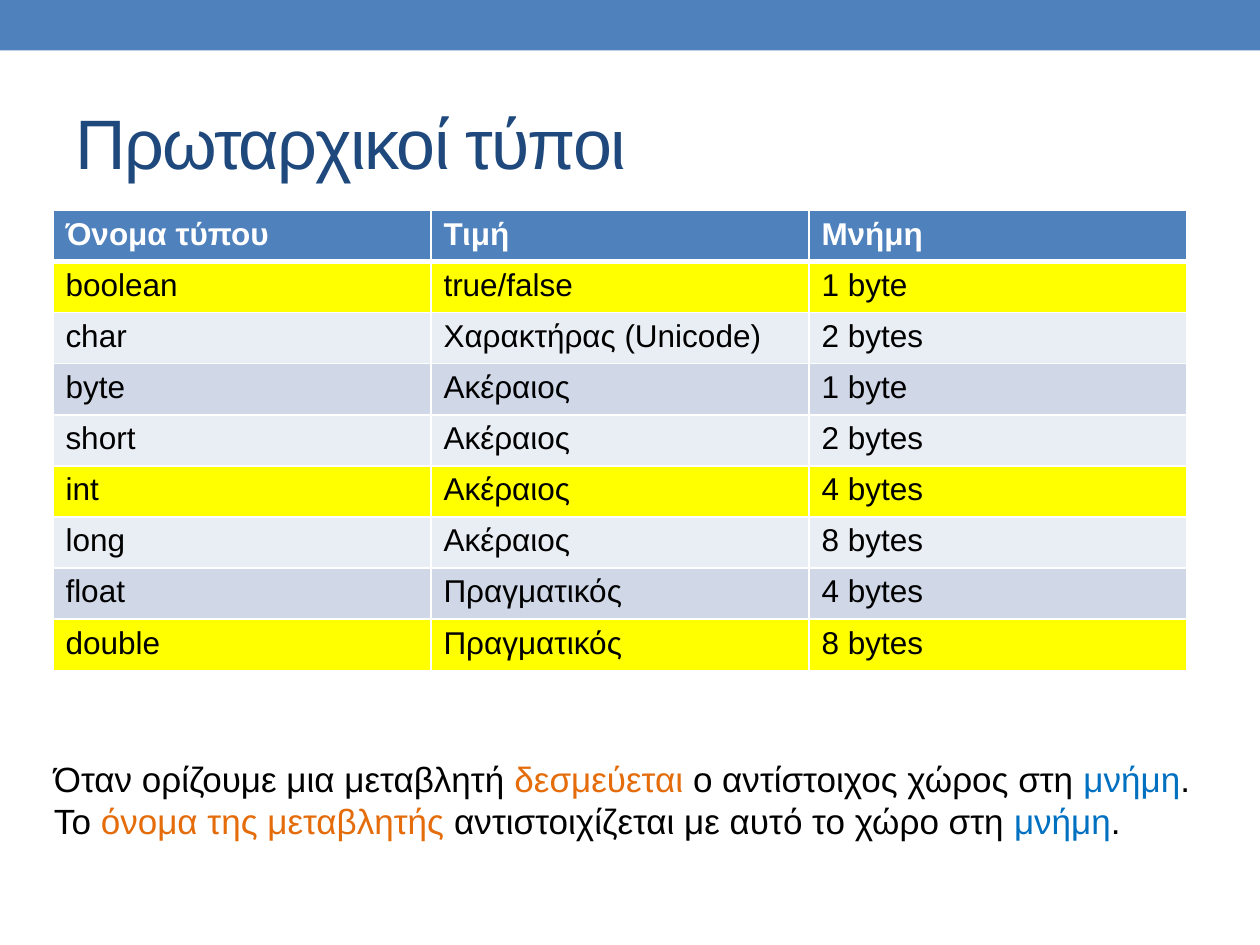
"""Build a slide on the primitive types and the memory they take."""
from dataclasses import dataclass

from lxml import etree
from pptx import Presentation
from pptx.dml.color import RGBColor
from pptx.enum.shapes import MSO_SHAPE
from pptx.enum.text import MSO_ANCHOR, MSO_AUTO_SIZE
from pptx.oxml.ns import qn
from pptx.util import Inches, Pt

RECT = MSO_SHAPE.RECTANGLE
MIDDLE = MSO_ANCHOR.MIDDLE
GROW = MSO_AUTO_SIZE.SHAPE_TO_FIT_TEXT


@dataclass(frozen=True)
class Theme:
    font: str = "Arial"
    blue: str = "4F81BD"
    navy: str = "1F497D"
    white: str = "FFFFFF"
    black: str = "000000"
    mark: str = "FFFF00"
    pale: str = "E9EDF4"
    band: str = "D0D8E8"
    warm: str = "E46C0A"
    cool: str = "0070C0"
    title: int = 40
    cell: int = 18
    note: int = 20


theme = Theme()


def add_run(para, text, size, color, bold=False):
    run = para.add_run()
    run.text = text
    run.font.name = theme.font
    run.font.size = Pt(size)
    run.font.bold = bold
    run.font.color.rgb = RGBColor.from_string(color)
    return run


def add_edge(cell, side, width):
    props = cell._tc.get_or_add_tcPr()
    line = etree.SubElement(props, qn(f"a:ln{side}"), w=str(Pt(width)))
    fill = etree.SubElement(line, qn("a:solidFill"))
    etree.SubElement(fill, qn("a:srgbClr"), val=theme.white)


deck = Presentation()
deck.slide_width, deck.slide_height = Inches(10), Inches(7.5)
slide = deck.slides.add_slide(deck.slide_layouts[6])
shapes = slide.shapes

bar = shapes.add_shape(RECT, 0, 0, deck.slide_width, Inches(0.4))
bar.shadow.inherit = False
bar.fill.solid()
bar.fill.fore_color.rgb = RGBColor.from_string(theme.blue)
bar.line.fill.background()

title = shapes.add_textbox(Inches(0.5), Inches(0.58), Inches(9), Inches(1.08))
frame = title.text_frame
frame.word_wrap = True
frame.vertical_anchor = MIDDLE
head = add_run(frame.paragraphs[0], "Πρωταρχικοί τύποι", theme.title, theme.navy)
head.font._element.set("spc", "-100")

rows = [
    ("Όνομα τύπου", "Τιμή", "Μνήμη"),
    ("boolean", "true/false", "1 byte"),
    ("char", "Χαρακτήρας (Unicode)", "2 bytes"),
    ("byte", "Ακέραιος", "1 byte"),
    ("short", "Ακέραιος", "2 bytes"),
    ("int", "Ακέραιος", "4 bytes"),
    ("long", "Ακέραιος", "8 bytes"),
    ("float", "Πραγματικός", "4 bytes"),
    ("double", "Πραγματικός", "8 bytes"),
]
marked = {"boolean", "int", "double"}
table = shapes.add_table(
    len(rows), len(rows[0]), Inches(0.42), Inches(1.67), Inches(9), Inches(3.65)
).table

for r, row in enumerate(rows):
    top = r == 0
    if top:
        fill = theme.blue
    elif row[0] in marked:
        fill = theme.mark
    else:
        fill = theme.band if r % 2 else theme.pale
    for c, text in enumerate(row):
        cell = table.cell(r, c)
        for side in "LRTB":
            thick = (top and side == "B") or (r == 1 and side == "T")
            add_edge(cell, side, 3 if thick else 1)
        cell.fill.solid()
        cell.fill.fore_color.rgb = RGBColor.from_string(fill)
        color = theme.white if top else theme.black
        add_run(cell.text_frame.paragraphs[0], text, theme.cell, color, top)

lines = [
    [
        ("Όταν ορίζουμε μια μεταβλητή ", theme.black),
        ("δεσμεύεται", theme.warm),
        (" ο αντίστοιχος χώρος στη ", theme.black),
        ("μνήμη", theme.cool),
        (".", theme.black),
    ],
    [
        ("Το ", theme.black),
        ("όνομα της μεταβλητής ", theme.warm),
        ("αντιστοιχίζεται με αυτό το χώρο στη ", theme.black),
        ("μνήμη", theme.cool),
        (".", theme.black),
    ],
]
note = shapes.add_textbox(Inches(0.33), Inches(5.96), Inches(9.29), Inches(0.77))
frame = note.text_frame
frame.word_wrap = False
frame.auto_size = GROW
for n, line in enumerate(lines):
    para = frame.add_paragraph() if n else frame.paragraphs[0]
    for text, color in line:
        add_run(para, text, theme.note, color)

deck.save("out.pptx")
